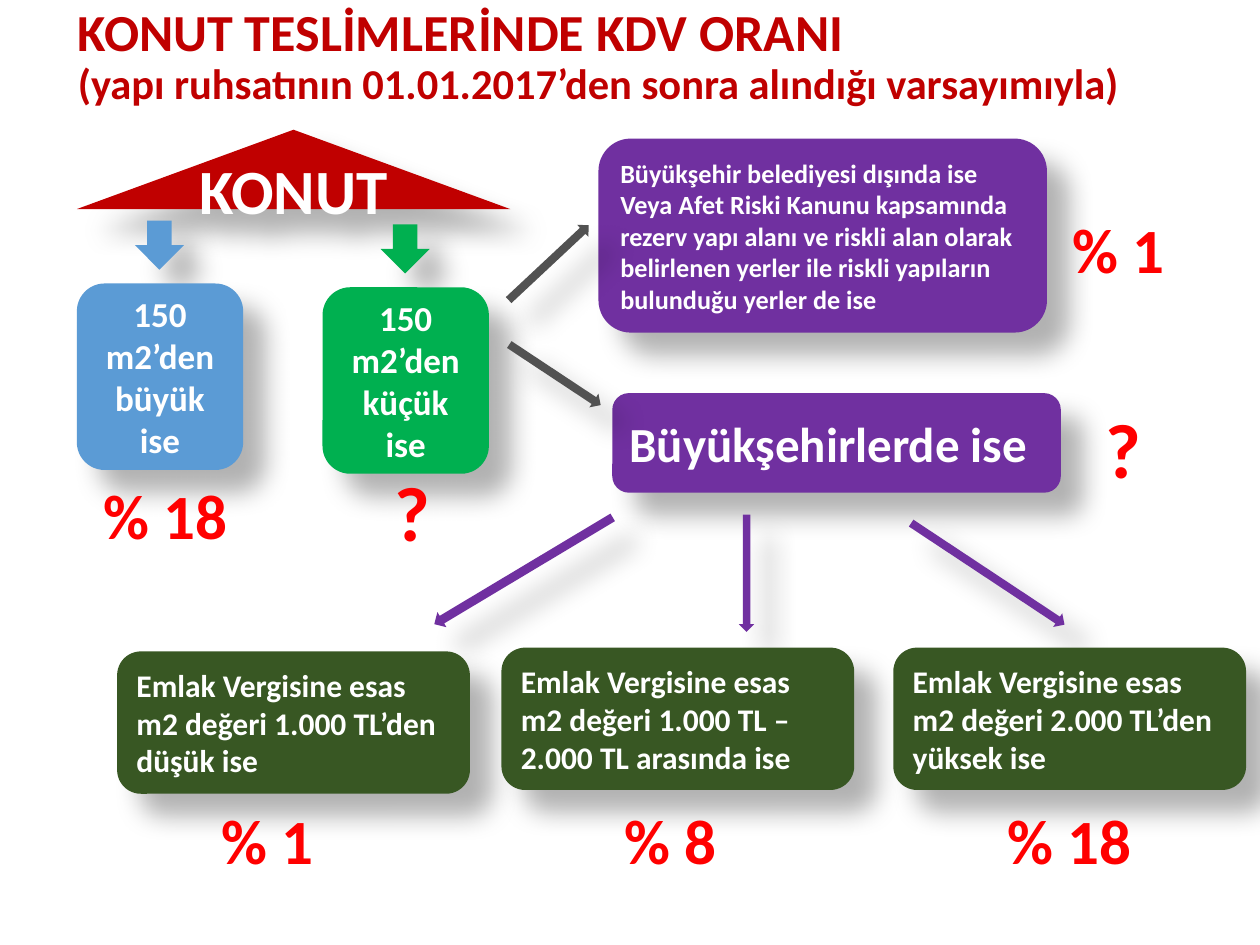
import pptx
import pptx.util
import pptx.dml.color
import pptx.enum.shapes
import pptx.enum.text
import lxml.etree

COLS, ROWS = 100, 75
WIDTH, HEIGHT = pptx.util.Inches(10), pptx.util.Inches(7.5)
COL, ROW = WIDTH / COLS, HEIGHT / ROWS
SHAPE = pptx.enum.shapes.MSO_SHAPE
ALIGN = pptx.enum.text.PP_ALIGN
ANCHOR = pptx.enum.text.MSO_ANCHOR
NS = "http://schemas.openxmlformats.org/drawingml/2006/main"
WHITE, RED, CRIMSON = "FFFFFF", "FF0000", "C00000"
BLUE, GREEN, PURPLE, OLIVE, GRAY = "5B9BD5", "00B050", "7030A0", "385723", "525252"


def color(value):
    return pptx.dml.color.RGBColor.from_string(value)


def place(box):
    x, y, w, h = box
    return [round(v) for v in (x * COL, y * ROW, w * COL, h * ROW)]


def within(box, dx, dy, w, h):
    return box[0] + dx, box[1] + dy, w, h


def add_run(p, text, size, fill):
    r = p.add_run()
    r.text = text
    font = {"name": "Calibri", "size": pptx.util.Pt(size), "bold": True}
    for key, value in font.items():
        setattr(r.font, key, value)
    r.font.color.rgb = color(fill)


def write(sp, lines, size, fill, align=ALIGN.LEFT, anchor=ANCHOR.MIDDLE):
    tf = sp.text_frame
    for key, value in {"word_wrap": True, "vertical_anchor": anchor}.items():
        setattr(tf, key, value)
    for i, line in enumerate(lines):
        p = tf.add_paragraph() if i else tf.paragraphs[0]
        p.alignment = align
        add_run(p, line, size, fill)


def add_shadow(sp):
    sp.shadow.inherit = False
    effects = sp._element.spPr.find(f"{{{NS}}}effectLst")
    shadow = lxml.etree.SubElement(
        effects, f"{{{NS}}}outerShdw", blurRad=str(pptx.util.Pt(15)),
        dist=str(pptx.util.Pt(18)), dir="2700000", rotWithShape="0")
    black = lxml.etree.SubElement(shadow, f"{{{NS}}}srgbClr", val="000000")
    lxml.etree.SubElement(black, f"{{{NS}}}alpha", val="30000")


def solid(s, kind, box, fill, rotation=0):
    sp = s.shapes.add_shape(kind, *place(box))
    sp.fill.solid()
    sp.fill.fore_color.rgb = color(fill)
    sp.line.fill.background()
    sp.rotation = rotation
    add_shadow(sp)
    return sp


def card(s, box, fill, lines, size, align=ALIGN.LEFT):
    write(solid(s, SHAPE.ROUNDED_RECTANGLE, box, fill), lines, size, WHITE, align)


def rate(s, box, text):
    unknown = text == "?"
    sp = s.shapes.add_textbox(*place(box))
    write(sp, [text], 44 if unknown else 36, RED,
          ALIGN.CENTER if unknown else ALIGN.LEFT, ANCHOR.TOP)


def title(s, box):
    sp = s.shapes.add_textbox(*place(box))
    write(sp, ["KONUT TESLİMLERİNDE KDV ORANI"], 29.7, CRIMSON)
    p = sp.text_frame.paragraphs[0]
    p.line_spacing = 0.9
    p.add_line_break()
    add_run(p, "(yapı ruhsatının 01.01.2017’den sonra alındığı varsayımıyla)", 24.3, CRIMSON)


def roof(s, box):
    write(solid(s, SHAPE.ISOSCELES_TRIANGLE, box, CRIMSON), ["KONUT"], 36, WHITE, ALIGN.CENTER)


def size_branch(s, box, fill, text, result, rate_dy):
    solid(s, SHAPE.DOWN_ARROW, within(box, 4.6, -5, 3.9, 3.9), fill)
    card(s, box, fill, [text], 20, ALIGN.CENTER)
    rate(s, within(box, 1.1, rate_dy, 12.1, 7.1), result)


def place_branch(s, box, lines, size, result, rate_dx, rate_dy):
    card(s, box, PURPLE, lines, size)
    rate(s, within(box, rate_dx, rate_dy, 12.1, 7.1), result)


def value_branch(s, box, text, result, rate_dx):
    card(s, box, OLIVE, [text], 18)
    rate(s, (box[0] + rate_dx, 63.1, 12.1, 7.1), result)


def arrows(s, items):
    for box, fill, rotation in items:
        solid(s, SHAPE.RIGHT_ARROW, box, fill, rotation)


def main():
    prs = pptx.Presentation()
    prs.slide_width, prs.slide_height = WIDTH, HEIGHT
    s = prs.slides.add_slide(prs.slide_layouts[6])
    title(s, (5.2, 1.5, 90, 6.1))
    roof(s, (6.1, 10.3, 34.4, 6.3))
    size_branch(s, (6.1, 22.5, 13.2, 14.8), BLUE, "150 m2’den büyük ise", "% 18", 14.8)
    size_branch(s, (25.6, 22.8, 13.2, 14.8), GREEN, "150 m2’den küçük ise", "?", 13.6)
    place_branch(s, (47.5, 11, 35.6, 15.4), [
        "Büyükşehir belediyesi dışında ise",
        "Veya Afet Riski Kanunu kapsamında rezerv yapı alanı ve riskli alan olarak "
        "belirlenen yerler ile riskli yapıların bulunduğu yerler de ise",
    ], 15, "% 1", 36.6, 5.2)
    place_branch(s, (48.6, 31.2, 35.6, 7.9), ["Büyükşehirlerde ise"], 28, "?", 34.5, 0.2)
    arrows(s, [
        ((39.2, 20.2, 8.7, 1.3), GRAY, 316.9),
        ((39.7, 29.1, 8.7, 1.3), GRAY, 33.5),
        ((33.3, 44.6, 16.5, 1.4), PURPLE, 149.1),
        ((54.6, 44.9, 9.3, 1.2), PURPLE, 90),
        ((71.1, 44.9, 14.6, 1.3), PURPLE, 33.5),
    ])
    for x, y, limit, result, rate_dx in [
        (9.3, 51.7, "1.000 TL’den düşük", "% 1", 7.3),
        (39.8, 51.4, "1.000 TL – 2.000 TL arasında", "% 8", 8.8),
        (70.9, 51.4, "2.000 TL’den yüksek", "% 18", 8.1),
    ]:
        text = f"Emlak Vergisine esas m2 değeri {limit} ise"
        value_branch(s, (x, y, 28, 11.3), text, result, rate_dx)
    prs.save("out.pptx")


if __name__ == "__main__":
    main()
